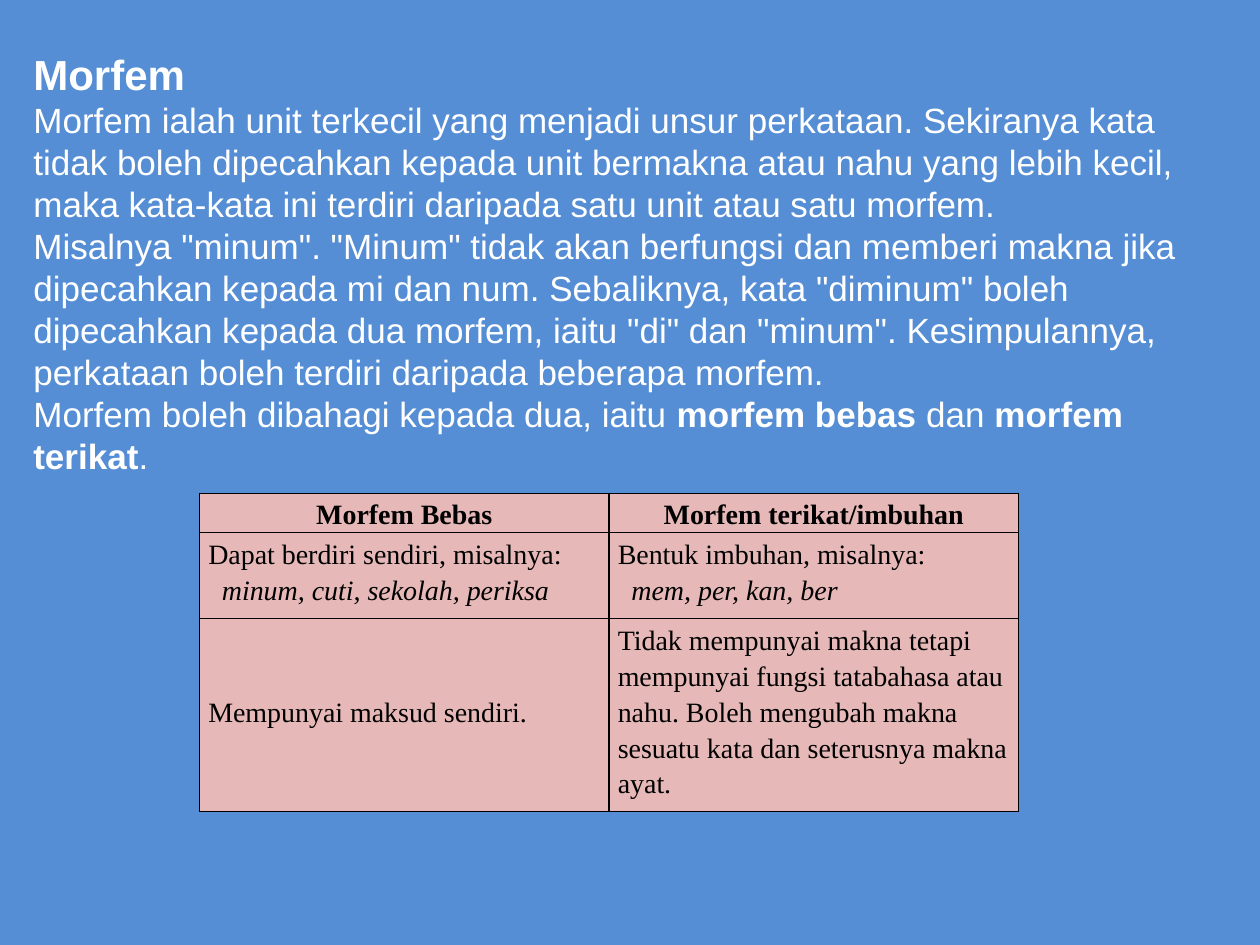
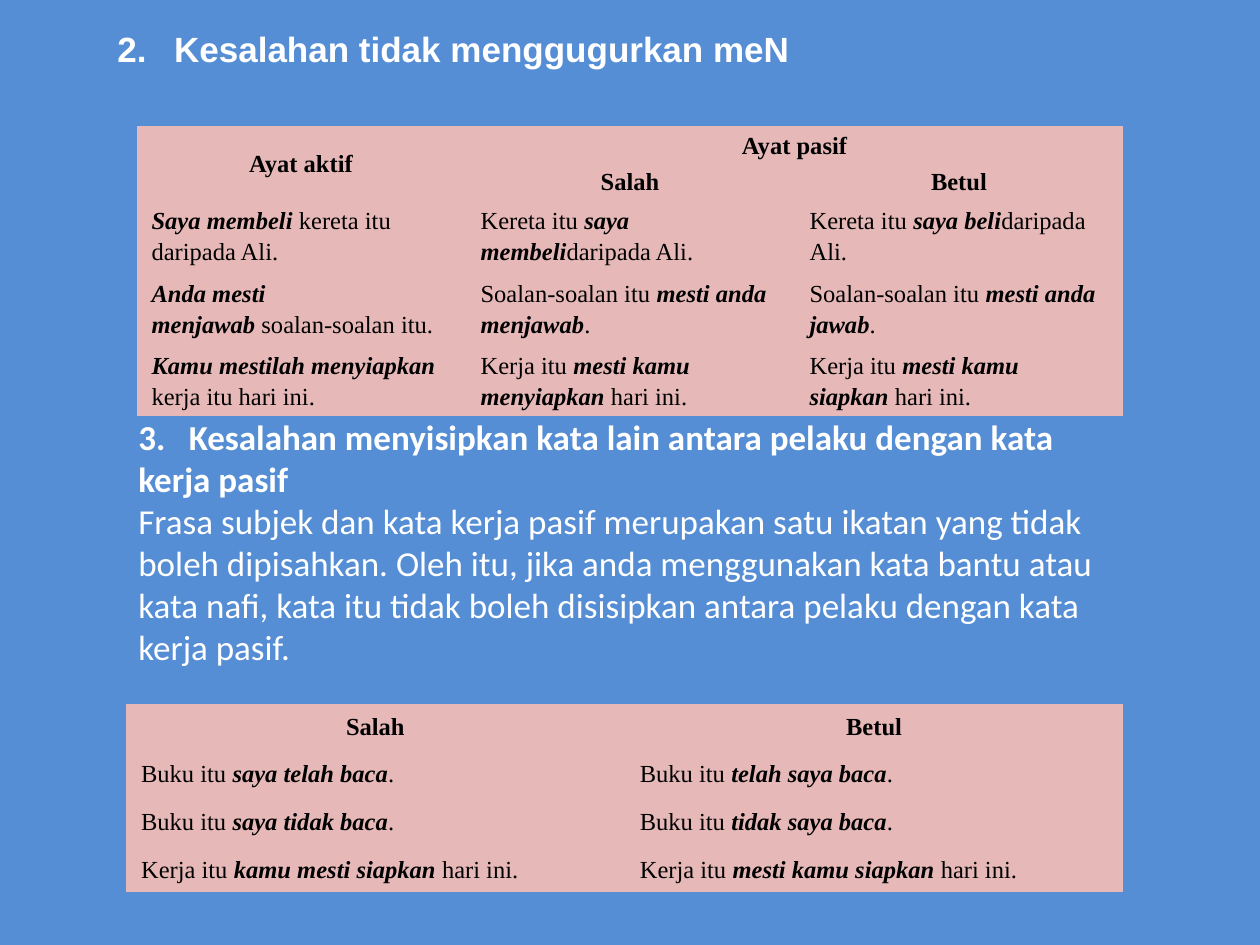
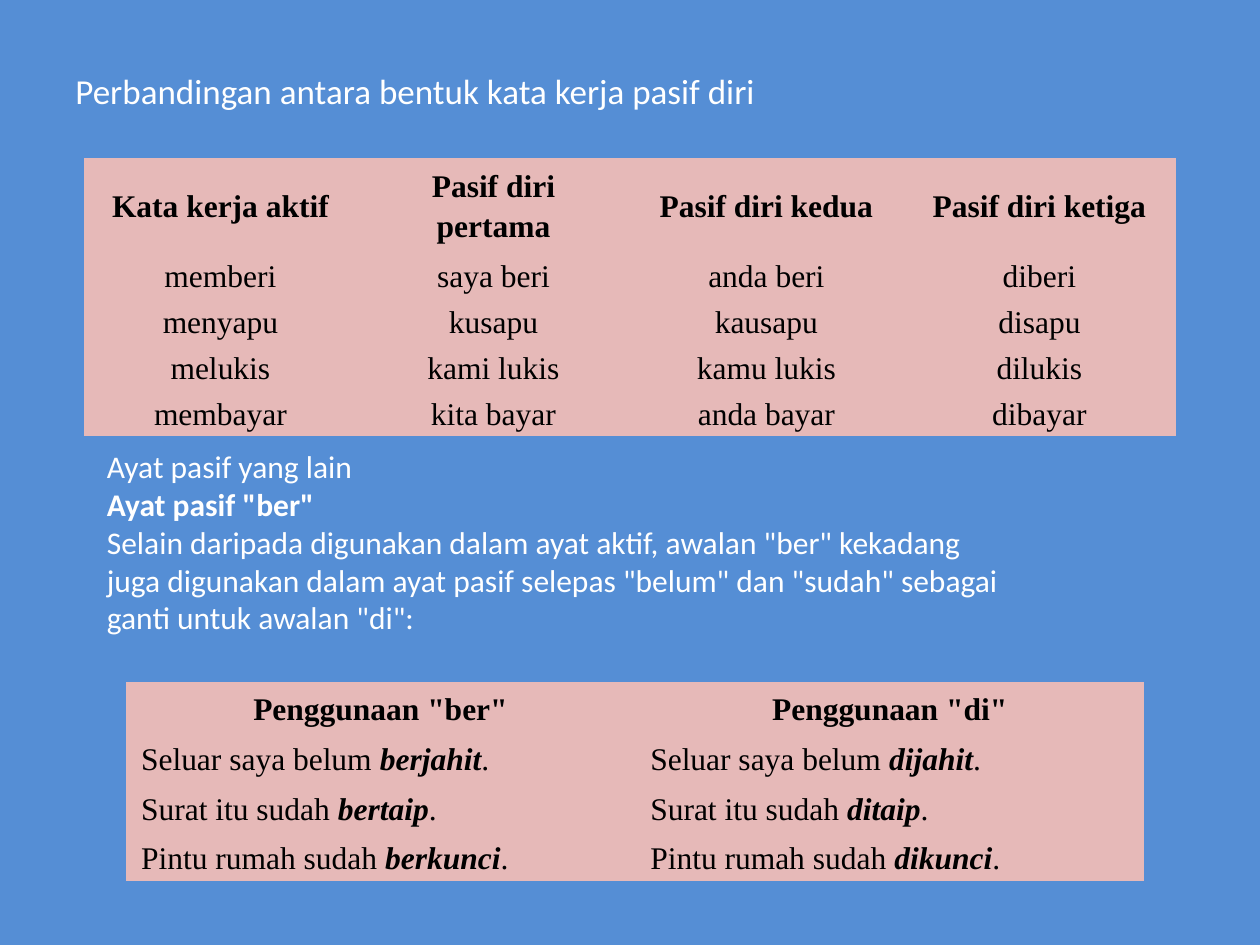
import pptx
import pptx.util
import pptx.dml.color
import pptx.enum.text
import pptx.oxml
import pptx.oxml.ns
from lxml import etree

BLUE, PINK, WHITE, BLACK = "558ED5", "E6B9B8", "FFFFFF", "000000"
SERIF, SANS, BODY = "Times New Roman", "Arial", "Calibri"
UNIT = pptx.util.Inches(1) // 12  # the slide is a grid of 120 columns by 90 rows
TIGHT, WIDE, MID = (0.01,) * 4, (0.12, 0.02, 0.12, 0.02), (0.07, 0.02, 0.07, 0.09)
ALIGN = pptx.enum.text.PP_ALIGN
HARD = chr(160)


def grid(cells):
    return round(cells * UNIT)


def tint(code):
    return pptx.dml.color.RGBColor.from_string(code)


def write(frame, text, size=20, font=BODY, color=WHITE, first=None, style="b",
          bold=False, align=None, space=None, indent=0, tab=0):
    """Fill a frame: lines are paragraphs, |marks| take the style, ~ is a hard space.

    first is the size of the first line; indent moves the later lines.
    """
    for row, line in enumerate(text.split("\n")):
        para = frame.paragraphs[0] if row == 0 else frame.add_paragraph()
        para.alignment, para.line_spacing = align, space
        props = para._p.get_or_add_pPr()
        if row and indent:
            props.set("marL", str(grid(indent)))
            props.set("indent", "0")
        if "\t" in line:
            stops = etree.SubElement(props, pptx.oxml.ns.qn("a:tabLst"))
            etree.SubElement(stops, pptx.oxml.ns.qn("a:tab"), pos=str(grid(tab)), algn="l")
        for turn, part in enumerate(line.split("|")):
            if not part:
                continue
            run = para.add_run()
            run.text = part.replace("~", HARD)
            face, mark = run.font, turn % 2 == 1
            face.name, face.color.rgb = font, tint(color)
            face.size = pptx.util.Pt(first if first and row == 0 else size)
            face.bold = bold or (mark and "b" in style)
            face.italic = mark and "i" in style


def edge(cell, line):
    """Draw all four borders in a colour, or none."""
    props = cell._tc.get_or_add_tcPr()
    fill = f'<a:solidFill><a:srgbClr val="{line}"/></a:solidFill>' if line else "<a:noFill/>"
    for side in "LRTB":
        props.append(pptx.oxml.parse_xml(
            f'<a:ln{side} {pptx.oxml.ns.nsdecls("a")} w="12700">{fill}</a:ln{side}>'))


class Deck:
    def __init__(self):
        self.show = pptx.Presentation()
        self.show.slide_width, self.show.slide_height = grid(120), grid(90)
        self.slide = None

    def page(self):
        self.slide = self.show.slides.add_slide(self.show.slide_layouts[6])
        fill = self.slide.background.fill
        fill.solid()
        fill.fore_color.rgb = tint(BLUE)

    def text(self, place, words, **form):
        frame = self.slide.shapes.add_textbox(*map(grid, place)).text_frame
        frame.word_wrap = True
        frame.auto_size = pptx.enum.text.MSO_AUTO_SIZE.SHAPE_TO_FIT_TEXT
        write(frame, words, **form)

    def table(self, place, rows, highs, size, heads=1, top=TIGHT, pad=WIDE,
              align=None, line=None, style="bi", merges=()):
        """Add a table; None marks a cell that a merge covers."""
        left, up, wide = place
        count = len(rows[0])
        table = self.slide.shapes.add_table(
            len(rows), count, *map(grid, (left, up, wide, sum(highs)))).table
        for col in table.columns:
            col.width = grid(wide / count)
        for r, (row, high) in enumerate(zip(rows, highs)):
            table.rows[r].height = grid(high)
            head = r < heads
            for c, words in enumerate(row):
                cell = table.cell(r, c)
                edge(cell, line)
                cell.fill.solid()
                cell.fill.fore_color.rgb = tint(PINK)
                cell.vertical_anchor = pptx.enum.text.MSO_ANCHOR.MIDDLE
                (cell.margin_left, cell.margin_top, cell.margin_right,
                 cell.margin_bottom) = map(pptx.util.Inches, top if head else pad)
                if words:
                    write(cell.text_frame, words, size=size, font=SERIF, color=BLACK,
                          style=style, bold=head, align=ALIGN.CENTER if head else align,
                          space=1.15, indent=1.3)
        for start, end in merges:
            table.cell(*start).merge(table.cell(*end))


def morphs(deck):
    deck.page()
    deck.table((19, 47, 78), [
        ["Morfem Bebas", "Morfem terikat/imbuhan"],
        ["Dapat berdiri sendiri, misalnya:\n|minum, cuti, sekolah, periksa|",
         "Bentuk imbuhan, misalnya:\n|mem, per, kan, ber|"],
        ["Mempunyai maksud sendiri.",
         "Tidak mempunyai makna tetapi mempunyai fungsi tatabahasa atau nahu. "
         "Boleh mengubah makna sesuatu kata dan seterusnya makna ayat."],
    ], [3.7, 8.2, 18.4], 16, pad=MID, line=BLACK, style="i")
    deck.text((2, 4, 114, 49), (
        "|Morfem|\n"
        "Morfem ialah unit terkecil yang menjadi unsur perkataan. Sekiranya kata tidak boleh "
        "dipecahkan kepada unit bermakna atau nahu yang lebih kecil, maka kata-kata ini "
        "terdiri daripada satu unit atau satu morfem.\n"
        'Misalnya "minum". "Minum" tidak akan berfungsi dan memberi makna jika dipecahkan '
        'kepada mi dan num. Sebaliknya, kata "diminum" boleh dipecahkan kepada dua morfem, '
        'iaitu "di" dan "minum". Kesimpulannya, perkataan boleh terdiri daripada beberapa '
        "morfem.\n"
        "Morfem boleh dibahagi kepada dua, iaitu~|morfem bebas~|dan |morfem terikat|."
    ), font=SANS, first=24)


def faults(deck):
    deck.page()
    deck.table((13, 12, 94), [
        ["Ayat aktif", "Ayat pasif", None],
        [None, "Salah", "Betul"],
        ["|Saya membeli|~kereta itu daripada Ali.",
         "Kereta itu~|saya membeli|daripada Ali.",
         "Kereta itu~|saya beli|daripada Ali."],
        ["|Anda mesti menjawab|~soalan-soalan itu.",
         "Soalan-soalan itu~|mesti anda menjawab|.",
         "Soalan-soalan itu~|mesti anda jawab|."],
        ["|Kamu mestilah menyiapkan |kerja itu hari ini.",
         "Kerja itu~|mesti kamu menyiapkan|~hari ini.",
         "Kerja itu~|mesti kamu siapkan~|hari ini."],
    ], [3.4, 3.4, 6.6, 6.6, 6.7], 14, heads=2,
        merges=[((0, 0), (1, 0)), ((0, 1), (0, 2))])
    deck.table((12, 67, 95), [
        ["Salah", "Betul"],
        ["Buku itu~|saya telah baca|.", "Buku itu~|telah saya baca|."],
        ["Buku itu~|saya tidak baca|.", "Buku itu~|tidak saya baca|."],
        ["Kerja itu~|kamu mesti siapkan~|hari ini.",
         "Kerja itu~|mesti kamu siapkan~|hari ini."],
    ], [4.2, 4.6, 4.6, 4.6], 14)
    deck.text((10, 2, 84, 9), "2.\tKesalahan tidak menggugurkan meN",
              font=SANS, bold=True, tab=5.4)
    deck.text((12, 39, 95, 29), (
        "|3.\tKesalahan menyisipkan kata lain antara pelaku dengan kata kerja pasif|\n"
        "Frasa subjek dan kata kerja pasif merupakan satu ikatan yang tidak boleh dipisahkan. "
        "Oleh itu, jika anda menggunakan kata bantu atau kata nafi, kata itu tidak boleh "
        "disisipkan antara pelaku dengan kata kerja pasif."
    ), tab=4.8)


def forms(deck):
    deck.page()
    deck.text((6, 6, 106, 5), "Perbandingan antara bentuk kata kerja pasif diri")
    deck.table((8, 15, 104), [
        ["Kata kerja aktif", "Pasif diri pertama", "Pasif diri kedua", "Pasif diri ketiga"],
        ["memberi", "saya beri", "anda beri", "diberi"],
        ["menyapu", "kusapu", "kausapu", "disapu"],
        ["melukis", "kami lukis", "kamu lukis", "dilukis"],
        ["membayar", "kita bayar", "anda bayar", "dibayar"],
    ], [8.9] + [4.4] * 4, 18, top=WIDE, pad=TIGHT, align=ALIGN.CENTER)
    deck.text((9, 42, 88, 23), (
        "Ayat pasif yang lain\n"
        '|Ayat pasif "ber"|\n'
        'Selain daripada digunakan dalam ayat aktif, awalan "ber" kekadang juga digunakan '
        'dalam ayat pasif selepas "belum" dan "sudah" sebagai ganti untuk awalan "di":'
    ), size=18)
    deck.table((12, 65, 97), [
        ['Penggunaan "ber"', 'Penggunaan "di"'],
        ["Seluar saya belum~|berjahit|.", "Seluar saya belum~|dijahit|."],
        ["Surat itu sudah~|bertaip|.", "Surat itu sudah~|ditaip|."],
        ["Pintu rumah sudah~|berkunci|.", "Pintu rumah sudah~|dikunci|."],
    ], [4.8, 4.7, 4.7, 4.7], 18)


def main():
    deck = Deck()
    for build in (morphs, faults, forms):
        build(deck)
    deck.show.save("out.pptx")


if __name__ == "__main__":
    main()
